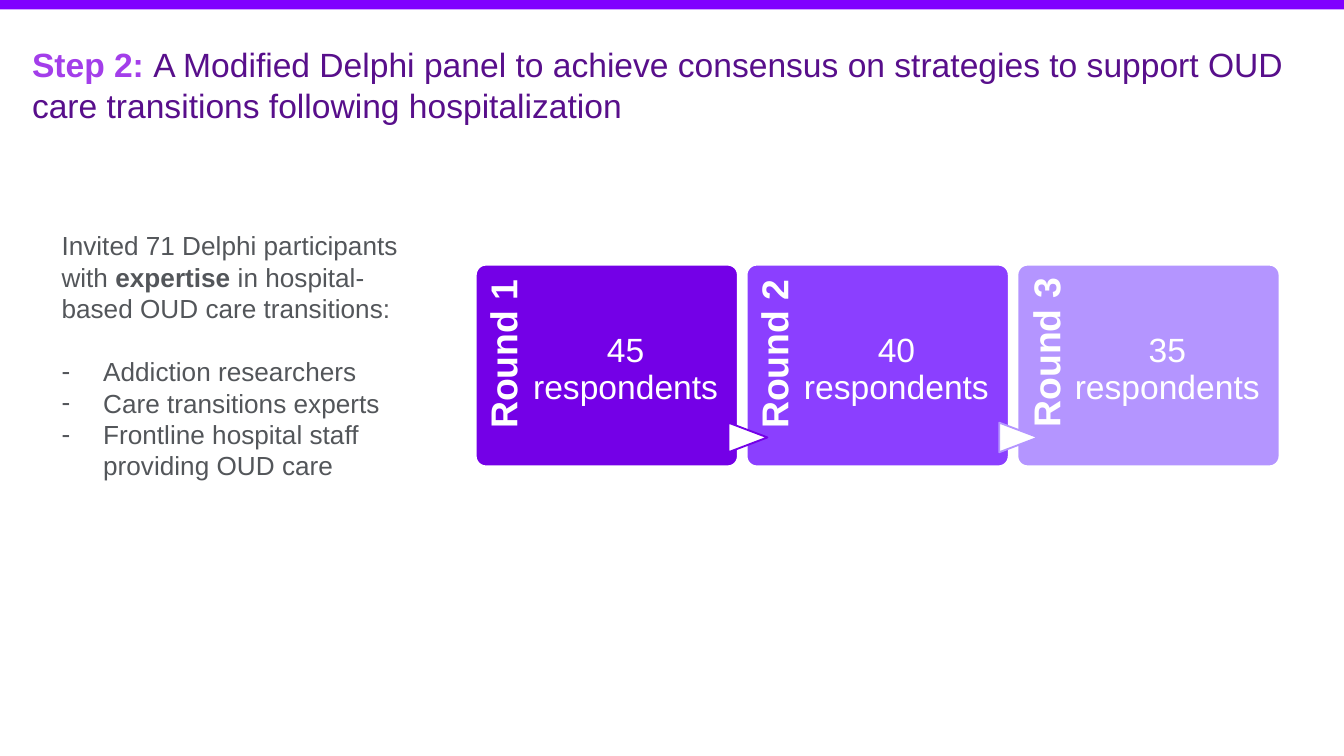
"""Build the Delphi panel slide with three survey rounds."""
from lxml.etree import SubElement
from pptx import Presentation
from pptx.dml.color import RGBColor
from pptx.enum.shapes import MSO_SHAPE as Shape
from pptx.enum.text import MSO_ANCHOR as Anchor, PP_ALIGN as Align
from pptx.oxml.ns import qn
from pptx.util import Inches, Pt

COLORS = {
    "bar": "8000FF",
    "step": "A33EEA",
    "title": "580F8B",
    "body": "53565A",
    "white": "FFFFFF",
    "round_1": "7400E7",
    "round_2": "8B3FFF",
    "round_3": "B495FF",
}


def add_span(para, text, size=14, color="body", bold=False, font="Arial"):
    span = para.add_run()
    span.text = text
    span.font.name = font
    span.font.size = Pt(size)
    span.font.bold = bold
    span.font.color.rgb = RGBColor.from_string(COLORS[color])


class SlideBuilder:
    def __init__(self, page, font="Arial"):
        self.page = page
        self.font = font

    def shape(self, kind, left, top, width, height, fill, line=None, rotation=0):
        shape = self.page.shapes.add_shape(
            kind, Inches(left), Inches(top), Inches(width), Inches(height))
        shape.shadow.inherit = False
        shape.rotation = rotation
        shape.fill.solid()
        shape.fill.fore_color.rgb = RGBColor.from_string(COLORS[fill])
        if line:
            shape.line.color.rgb = RGBColor.from_string(COLORS[line])
            shape.line.width = Pt(1)
        else:
            shape.line.fill.background()
        return shape

    def text_box(self, left, top, width, height, insets=(0.1, 0.05, 0.1, 0.05),
                 anchor=Anchor.TOP, rotation=0):
        box = self.page.shapes.add_textbox(
            Inches(left), Inches(top), Inches(width), Inches(height))
        box.rotation = rotation
        frame = box.text_frame
        frame.word_wrap = True
        frame.vertical_anchor = anchor
        (frame.margin_left, frame.margin_top,
         frame.margin_right, frame.margin_bottom) = map(Inches, insets)
        return frame

    def caption(self, text, left, top, width, height, right_inset=0,
                anchor=Anchor.TOP, align=Align.CENTER, rotation=0, **style):
        frame = self.text_box(left, top, width, height, (0, 0.07, right_inset, 0),
                              anchor, rotation)
        para = frame.paragraphs[0]
        para.alignment = align
        para.line_spacing = 0.9
        add_span(para, text, color="white", font=self.font, **style)

    def bullet(self, frame, text, space_before=0):
        para = frame.add_paragraph()
        para.space_before = Pt(space_before)
        properties = para._p.get_or_add_pPr()
        properties.set("marL", str(Inches(0.31)))
        properties.set("indent", str(-Inches(0.31)))
        SubElement(properties, qn("a:buFont")).set("typeface", self.font)
        SubElement(properties, qn("a:buChar")).set("char", "-")
        add_span(para, text, font=self.font)


def add_rounds(builder):
    left, last_left, top, width, height = 3.54, 7.57, 1.97, 1.95, 1.5
    rounds = [
        (45, Anchor.TOP, Align.CENTER),
        (40, Anchor.TOP, Align.CENTER),
        (35, Anchor.MIDDLE, Align.RIGHT),
    ]
    pitch = (last_left - left) / (len(rounds) - 1)
    for number, (count, anchor, align) in enumerate(rounds, 1):
        x = left + (number - 1) * pitch
        card = builder.shape(Shape.ROUNDED_RECTANGLE, x, top, width, height,
                             f"round_{number}", "white")
        card.adjustments[0] = 0.05
        builder.caption(f"Round {number}", x - 0.42, top + 0.42, 1.23, 0.39,
                        right_inset=0.1, anchor=anchor, align=align,
                        rotation=270, size=20, bold=True)
        if number > 1:
            outline = "round_1" if number == 2 else "round_3"
            builder.shape(Shape.FLOWCHART_EXTRACT, x - 0.1, 3.11, 0.22, 0.29,
                          "white", outline, rotation=90)
        builder.caption(f"{count} respondents", x + 0.39, top, 1.45, height,
                        anchor=Anchor.MIDDLE, size=18)


def main():
    deck = Presentation()
    deck.slide_width = Inches(10)
    deck.slide_height = Inches(10) * 9 // 16
    builder = SlideBuilder(deck.slides.add_slide(deck.slide_layouts[6]))

    builder.shape(Shape.RECTANGLE, 0, 0, 10, 0.07, "bar")

    title = builder.text_box(0.14, 0.28, 9.66, 0.71).paragraphs[0]
    add_span(title, "Step 2: ", size=18, color="step", bold=True)
    add_span(title, "A Modified Delphi panel to achieve consensus on strategies "
             "to support OUD care transitions following hospitalization",
             size=18, color="title")

    invited = builder.text_box(0.36, 1.66, 2.93, 2.22)
    intro = invited.paragraphs[0]
    add_span(intro, "Invited 71 Delphi participants with ")
    add_span(intro, "expertise", bold=True)
    add_span(intro, " in hospital-based OUD care transitions:")
    builder.bullet(invited, "Addiction researchers", space_before=17)
    builder.bullet(invited, "Care transitions experts")
    builder.bullet(invited, "Frontline hospital staff providing OUD care")

    add_rounds(builder)
    deck.save("out.pptx")


if __name__ == "__main__":
    main()
